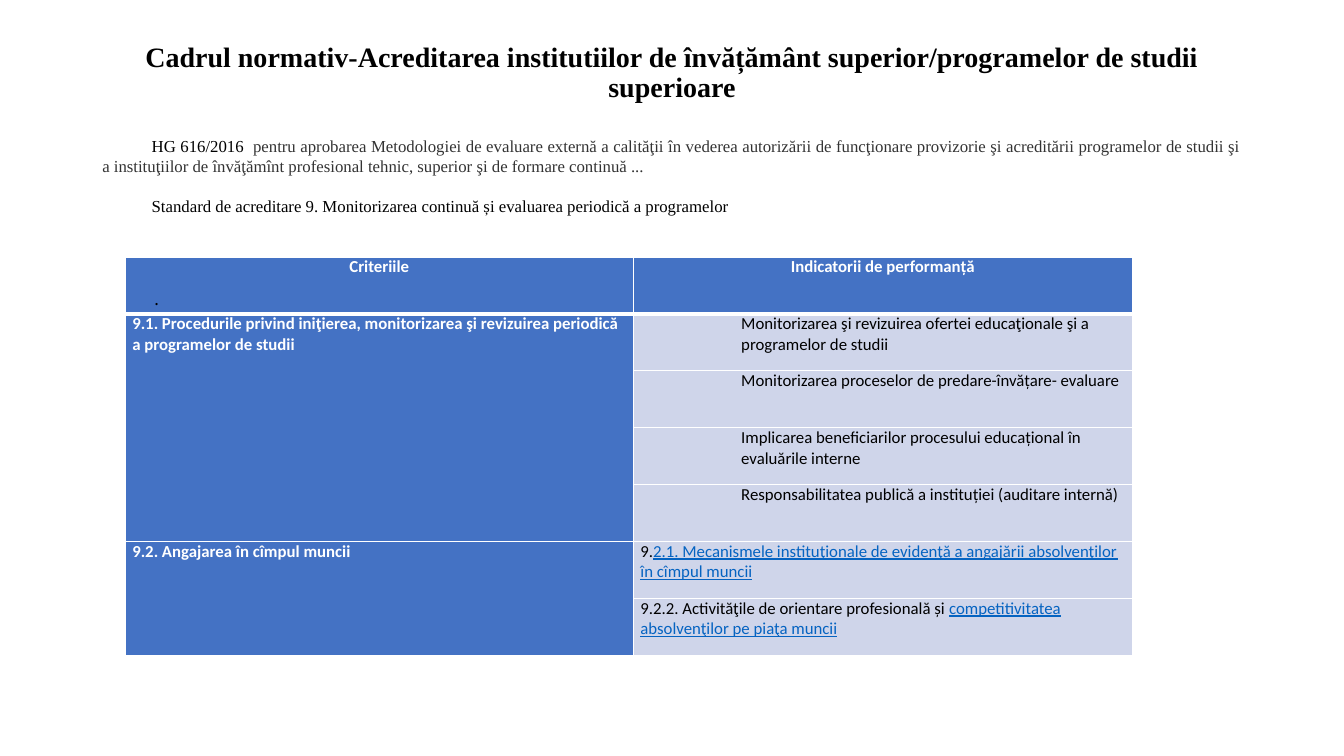
from dataclasses import dataclass

from lxml.etree import SubElement
from pptx import Presentation
from pptx.dml.color import RGBColor
from pptx.enum.text import MSO_ANCHOR, PP_ALIGN
from pptx.oxml.ns import qn
from pptx.util import Pt


@dataclass(frozen=True)
class Theme:
    """Colours, fonts and type sizes of the slide."""
    ink: str = "000000"
    quote: str = "333333"
    white: str = "FFFFFF"
    header: str = "4472C4"
    band: str = "CFD5EA"
    link: str = "0563C1"
    serif: str = "Times New Roman"
    sans: str = "Calibri"
    mono: str = "Noto Sans Mono"
    title_size: int = 20
    text_size: int = 12


THEME = Theme()
FIRST_LINE = Pt(35.3)
TITLE = "Cadrul normativ-Acreditarea institutiilor de învățământ superior/programelor de studii superioare"
DECISION = "HG 616/2016  "
DECISION_SUBJECT = (
    "pentru aprobarea Metodologiei de evaluare externă a calităţii în vederea autorizării "
    "de funcţionare provizorie şi acreditării programelor de studii şi a instituţiilor de "
    "învăţămînt profesional tehnic, superior şi de formare continuă\u00a0..."
)
STANDARD = "Standard de acreditare 9. Monitorizarea continuă și evaluarea periodică a programelor"
HEADINGS = ("Criteriile", "Indicatorii de performanță")
CRITERIA = (
    ("9.1. Procedurile privind iniţierea, monitorizarea şi revizuirea periodică a programelor de studii",
     Pt(72), (
         ("Monitorizarea şi revizuirea ofertei educaţionale şi a programelor de studii", ""),
         ("Monitorizarea proceselor de predare-învățare- evaluare", ""),
         ("Implicarea beneficiarilor procesului educațional în evaluările interne", ""),
         ("Responsabilitatea publică a instituției (auditare internă)", ""),
     )),
    ("9.2. Angajarea în cîmpul muncii", Pt(0), (
        ("9.", "2.1. Mecanismele instituţionale de evidenţă a angajării absolvenţilor în cîmpul muncii"),
        ("9.2.2. Activităţile de orientare profesională și ",
         "competitivitatea absolvenţilor pe piaţa muncii"),
    )),
)


def apply_format(target, values):
    """Set each named attribute of the target."""
    for name, value in values.items():
        setattr(target, name, value)


def add_run(paragraph, text, color, face, size=THEME.text_size, **font_values):
    """Append a styled run to the paragraph."""
    run = paragraph.add_run()
    run.text = text
    apply_format(run.font, {"name": face, "size": Pt(size), **font_values})
    run.font.color.rgb = RGBColor.from_string(color)


def indent(paragraph, margin=0, first_line=0):
    """Set the left margin and first-line indent of the paragraph."""
    properties = paragraph._p.get_or_add_pPr()
    properties.set("marL", str(int(margin)))
    properties.set("indent", str(int(first_line)))


def add_frame(slide, box, anchor=MSO_ANCHOR.TOP):
    """Add a wrapping text box and return its text frame."""
    frame = slide.shapes.add_textbox(*map(Pt, box)).text_frame
    apply_format(frame, {"word_wrap": True, "vertical_anchor": anchor})
    return frame


def add_title(slide, box):
    """Place the centred slide title."""
    title = add_frame(slide, box, MSO_ANCHOR.MIDDLE).paragraphs[0]
    apply_format(title, {"alignment": PP_ALIGN.CENTER, "line_spacing": 0.9})
    add_run(title, TITLE, THEME.ink, THEME.serif, THEME.title_size, bold=True)


def add_legal_basis(slide, box):
    """Place the government decision and the accreditation standard."""
    frame = add_frame(slide, box)
    decision, standard = frame.paragraphs[0], frame.add_paragraph()
    for paragraph in (decision, standard):
        paragraph.alignment = PP_ALIGN.JUSTIFY
        indent(paragraph, first_line=FIRST_LINE)
    add_run(decision, DECISION, THEME.ink, THEME.serif)
    add_run(decision, DECISION_SUBJECT, THEME.quote, THEME.serif)
    standard.space_before = Pt(14)
    add_run(standard, STANDARD, THEME.ink, THEME.serif)


def style_cell(cell, fill, top=1, bottom=1):
    """Give the cell its margins, fill and white borders."""
    apply_format(cell, {"margin_left": Pt(5), "margin_right": Pt(5),
                        "margin_top": 0, "margin_bottom": 0})
    cell.fill.solid()
    cell.fill.fore_color.rgb = RGBColor.from_string(fill)
    properties = cell._tc.get_or_add_tcPr()
    for position, (side, width) in enumerate(zip("LRTB", (1, 1, top, bottom))):
        border = SubElement(properties, qn(f"a:ln{side}"), w=str(Pt(width)))
        color = SubElement(SubElement(border, qn("a:solidFill")), qn("a:srgbClr"))
        color.set("val", THEME.white)
        properties.insert(position, border)


def add_criteria_table(slide, box):
    """Place the table of criteria and performance indicators."""
    row_count = 1 + sum(len(indicators) for _, _, indicators in CRITERIA)
    table = slide.shapes.add_table(row_count, len(HEADINGS), *map(Pt, box)).table
    for column, width in zip(table.columns, (363, box[2] - 363)):
        column.width = Pt(width)
    for row in table.rows:
        row.height = Pt(box[3] / row_count)

    for column, heading in enumerate(HEADINGS):
        cell = table.cell(0, column)
        style_cell(cell, THEME.header, bottom=3)
        paragraph = cell.text_frame.paragraphs[0]
        paragraph.alignment = PP_ALIGN.CENTER
        add_run(paragraph, heading, THEME.white, THEME.sans, bold=True)

    first = 1
    for criterion, margin, indicators in CRITERIA:
        for row, (lead, linked) in enumerate(indicators, first):
            top = 3 if row == 1 else 1
            style_cell(table.cell(row, 0), THEME.header, top=top)
            cell = table.cell(row, 1)
            style_cell(cell, THEME.band, top=top)
            paragraph = cell.text_frame.paragraphs[0]
            indent(paragraph, margin)
            add_run(paragraph, lead, THEME.ink, THEME.sans, bold=False)
            if linked:
                add_run(paragraph, linked, THEME.link, THEME.sans, bold=False, underline=True)
        criterion_cell = table.cell(first, 0)
        add_run(criterion_cell.text_frame.paragraphs[0], criterion,
                THEME.white, THEME.sans, bold=True)
        criterion_cell.merge(table.cell(first + len(indicators) - 1, 0))
        first += len(indicators)


def add_full_stop(slide, box):
    """Place the lone full stop over the table header."""
    paragraph = add_frame(slide, box).paragraphs[0]
    indent(paragraph, first_line=FIRST_LINE)
    add_run(paragraph, ".", THEME.ink, THEME.mono)


def main():
    """Build and save the presentation."""
    presentation = Presentation()
    apply_format(presentation, {"slide_width": Pt(960), "slide_height": Pt(540)})
    slide = presentation.slides.add_slide(presentation.slide_layouts[6])
    add_title(slide, (66, 26, 828, 52.5))
    add_legal_basis(slide, (66, 93.6, 828, 401))
    add_criteria_table(slide, (89.5, 183.6, 719.3, 284.4))
    add_full_stop(slide, (66, 203, 789, 44))
    presentation.save("out.pptx")


if __name__ == "__main__":
    main()
